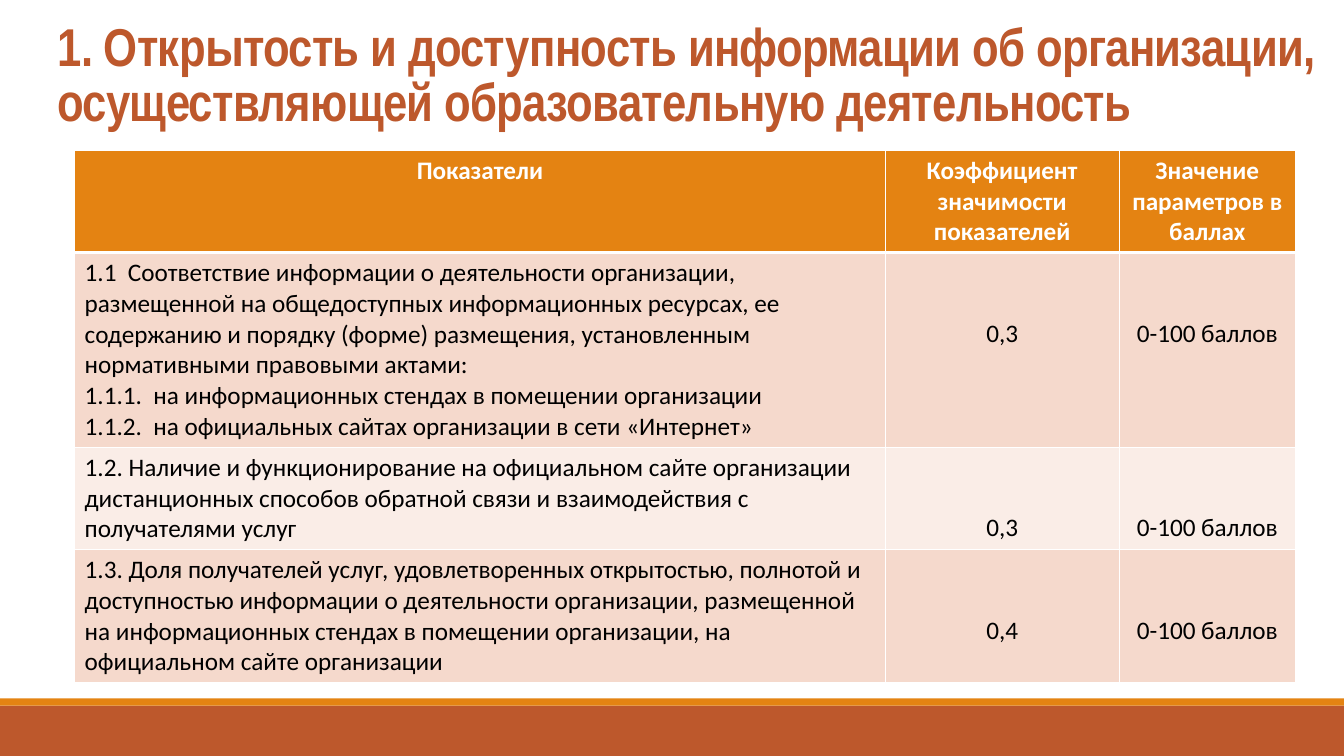
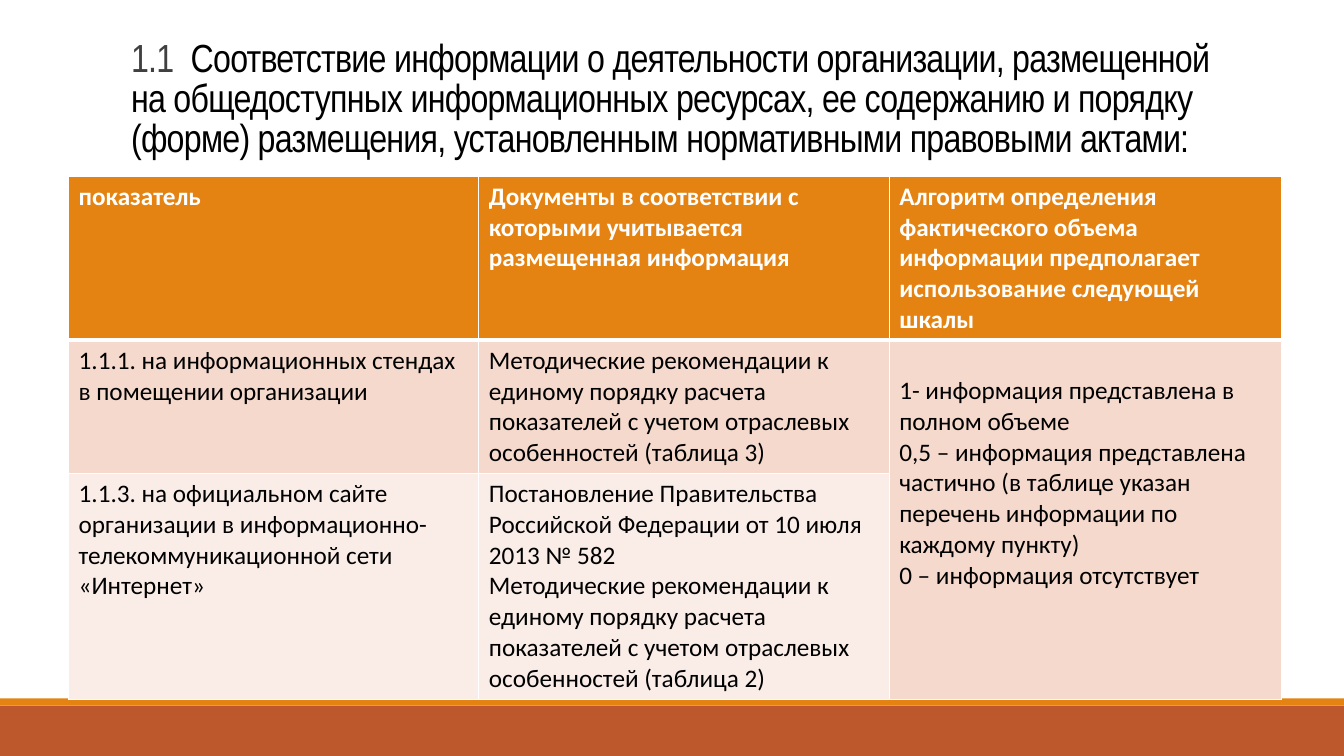
import pptx
import pptx.util
import pptx.dml.color
import pptx.enum.shapes
import pptx.enum.text
import pptx.oxml
import pptx.oxml.ns

Inches, Pt = pptx.util.Inches, pptx.util.Pt
WIDE, HIGH = 13.33, 7.5
HUE = {"rust": "BD582C", "gold": "E48312", "pink": "F5D9CC", "pale": "FAEDE7",
       "white": "FFFFFF", "black": "000000", "gray": "404040"}
HEAD, BODY = "Arial Narrow", "Calibri"
SIZE = 18
PAD, LINE = 0.05, 0.3  # cell inset and height of one text line, inches

BANDS = [("rust", 7, 0.5), ("gold", 6.93, 0.07)]  # colour, top, height

# A cell is a list of paragraphs; "drop" gives lines left free above the text,
# by (row, column); "merge" joins two cells, given by their corners.
PAGES = [
    {"title": [("1. Открытость и доступность информации об организации, "
                "осуществляющей образовательную деятельность", "rust")],
     "size": 38, "bold": True, "box": (0.47, 0.15, 12.86, 1.24),
     "at": (0.74, 1.49), "cols": [8.04, 2.32, 1.75], "rows": [1.01, 1.91, 1.01, 1.31],
     "cells": [
         [["Показатели"], ["Коэффициент значимости показателей"],
          ["Значение параметров в баллах"]],
         [["1.1  Соответствие информации о деятельности организации, размещенной на "
           "общедоступных информационных ресурсах, ее содержанию и порядку (форме) "
           "размещения, установленным нормативными правовыми актами:",
           "1.1.1.  на информационных стендах в помещении организации",
           "1.1.2.  на официальных сайтах организации в сети «Интернет»"],
          ["0,3"], ["0-100 баллов"]],
         [["1.2. Наличие и функционирование на официальном сайте организации "
           "дистанционных способов обратной связи и взаимодействия с получателями услуг"],
          ["0,3"], ["0-100 баллов"]],
         [["1.3. Доля получателей услуг, удовлетворенных открытостью, полнотой и "
           "доступностью информации о деятельности организации, размещенной на "
           "информационных стендах в помещении организации, на официальном сайте "
           "организации"],
          ["0,4"], ["0-100 баллов"]]],
     "center": [(0, 0)] + [(r, c) for r in range(4) for c in (1, 2)],
     "drop": {(r, c): 2 for r in (1, 2, 3) for c in (1, 2)},
     "merge": None},
    {"title": [("1.1  ", "gray"),
               ("Соответствие информации о деятельности организации, размещенной на "
                "общедоступных информационных ресурсах, ее содержанию и порядку (форме) "
                "размещения, установленным нормативными правовыми актами:", "black")],
     "size": 28, "bold": False, "box": (1.2, 0.24, 11, 1.52),
     "at": (0.68, 1.75), "cols": [4.07, 4.07, 3.89], "rows": [1.61, 1.32, 2.24],
     "cells": [
         [["показатель"],
          ["Документы в соответствии с которыми учитывается размещенная информация"],
          ["Алгоритм определения фактического объема информации предполагает "
           "использование следующей шкалы"]],
         [["1.1.1. на информационных стендах в помещении организации"],
          ["Методические рекомендации к единому порядку расчета показателей с учетом "
           "отраслевых особенностей (таблица 3)"],
          ["1- информация представлена в полном объеме",
           "0,5 – информация представлена частично (в таблице указан перечень "
           "информации по каждому пункту)",
           "0 – информация отсутствует"]],
         [["1.1.3. на официальном сайте организации в "
           "информационно-телекоммуникационной сети «Интернет»"],
          ["Постановление Правительства Российской Федерации от 10 июля 2013 № 582",
           "Методические рекомендации к единому порядку расчета показателей с учетом "
           "отраслевых особенностей (таблица 2)"],
          []]],
     "center": [], "drop": {(1, 2): 1}, "merge": ((1, 2), (2, 2))},
]


def tint(name):
    return pptx.dml.color.RGBColor.from_string(HUE[name])


def paint(fill, name):
    fill.solid()
    fill.fore_color.rgb = tint(name)


def add_bands(slide, layout):
    """Draw the bottom bands and move them to the layout that all slides share."""
    for name, top, high in BANDS:
        band = slide.shapes.add_shape(pptx.enum.shapes.MSO_SHAPE.RECTANGLE, 0,
                                      Inches(top), Inches(WIDE), Inches(high))
        band.shadow.inherit = False
        paint(band.fill, name)
        band.line.fill.background()
        layout.shapes._spTree.append(band._element)


def set_title(slide, page):
    title = slide.shapes.title
    title.left, title.top, title.width, title.height = map(Inches, page["box"])
    frame = title.text_frame
    frame.auto_size = pptx.enum.text.MSO_AUTO_SIZE.NONE
    frame.vertical_anchor = pptx.enum.text.MSO_ANCHOR.MIDDLE
    para = frame.paragraphs[0]
    para.alignment = pptx.enum.text.PP_ALIGN.LEFT
    para.line_spacing = 0.85
    para.font.name, para.font.size, para.font.bold = HEAD, Pt(page["size"]), page["bold"]
    for text, name in page["title"]:
        run = para.add_run()
        run.text = text
        run.font.color.rgb = tint(name)
        run._r.get_or_add_rPr().set("spc", "-50")


def add_edges(cell, head):
    """White rules round a cell, thicker below the header row."""
    props = cell._tc.get_or_add_tcPr()
    for side in "LRTB":
        wide = Pt(3 if head and side == "B" else 1)
        props.append(pptx.oxml.parse_xml(
            f'<a:ln{side} {pptx.oxml.ns.nsdecls("a")} w="{wide}"><a:solidFill>'
            f'<a:srgbClr val="{HUE["white"]}"/></a:solidFill></a:ln{side}>'))


def fill_cell(cell, paras, head, shade, center, drop):
    add_edges(cell, head)
    paint(cell.fill, shade)
    cell.margin_top = Inches(PAD + drop * LINE)
    cell.text = "\n".join(paras)
    for para in cell.text_frame.paragraphs:
        font = para.font
        font.name, font.size, font.bold = BODY, Pt(SIZE), head
        font.color.rgb = tint("white" if head else "black")
        if center:
            para.alignment = pptx.enum.text.PP_ALIGN.CENTER


def add_grid(slide, page):
    cols, rows = page["cols"], page["rows"]
    grid = slide.shapes.add_table(len(rows), len(cols), *map(
        Inches, (*page["at"], sum(cols), sum(rows)))).table
    for col, wide in zip(grid.columns, cols):
        col.width = Inches(wide)
    for row, high in zip(grid.rows, rows):
        row.height = Inches(high)
    for r, line in enumerate(page["cells"]):
        shade = "gold" if r == 0 else ("pale", "pink")[r % 2]
        for c, paras in enumerate(line):
            fill_cell(grid.cell(r, c), paras, r == 0, shade,
                      (r, c) in page["center"], page["drop"].get((r, c), 0))
    if page["merge"]:
        first, last = page["merge"]
        grid.cell(*first).merge(grid.cell(*last))


def main():
    deck = pptx.Presentation()
    deck.slide_width, deck.slide_height = Inches(WIDE), Inches(HIGH)
    layout = deck.slide_layouts.get_by_name("Title Only")
    for page in PAGES:
        slide = deck.slides.add_slide(layout)
        if page is PAGES[0]:
            add_bands(slide, layout)
        set_title(slide, page)
        add_grid(slide, page)
    deck.save("out.pptx")


if __name__ == "__main__":
    main()
